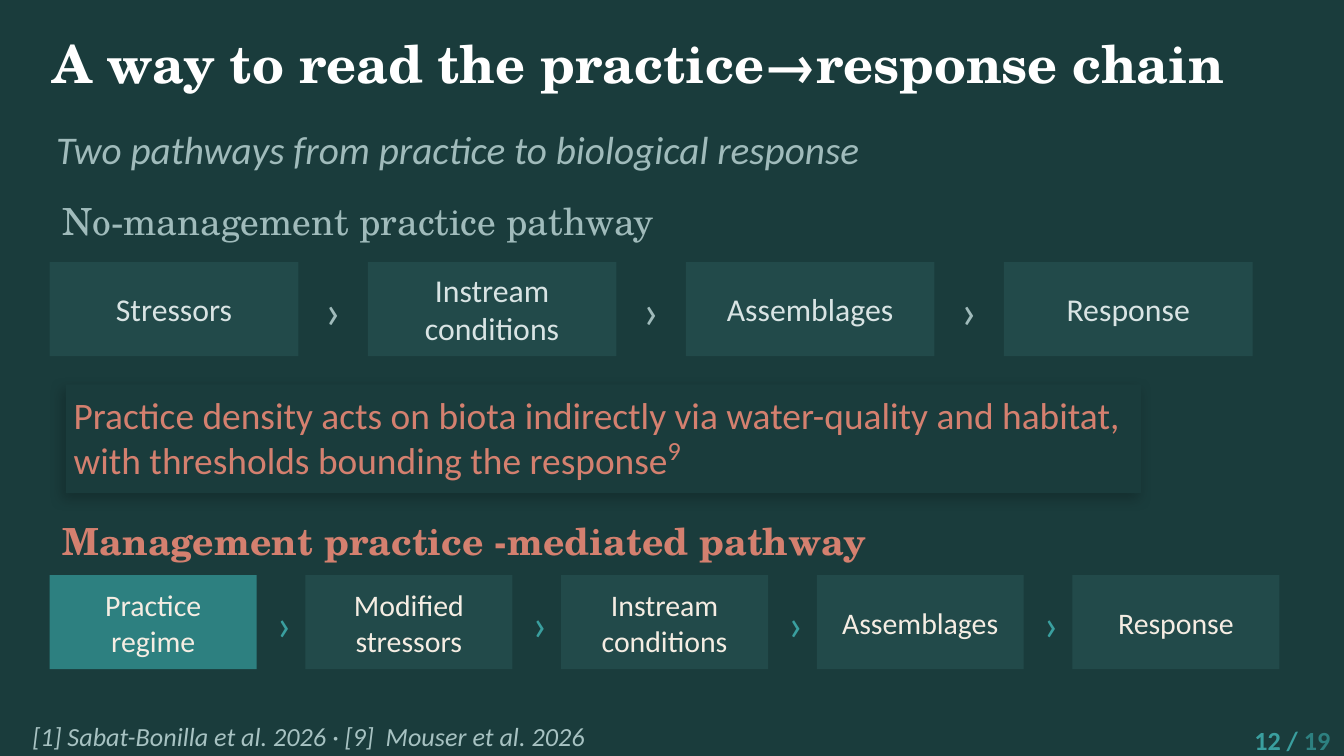
"""Build the slide on two pathways from practice to biological response."""
from lxml import etree
from pptx import Presentation, util as u
from pptx.dml.color import RGBColor
from pptx.enum import shapes, text
from pptx.oxml.ns import qn

WIDTH = 10
HEIGHT = WIDTH * 9 / 16
SERIF, SANS = "TeX Gyre Schola", "Calibri"
BACKGROUND = RGBColor(0x1A, 0x3C, 0x3C)
PANEL = RGBColor(0x22, 0x4A, 0x4A)
TEAL = RGBColor(0x2D, 0x80, 0x80)
BRIGHT_TEAL = RGBColor(0x3A, 0x9F, 0x9F)
MIST = RGBColor(0xA0, 0xBB, 0xBB)
PALE = RGBColor(0xD9, 0xE4, 0xE4)
CITATION = RGBColor(0xA7, 0xC2, 0xC2)
CREAM = RGBColor(0xF5, 0xED, 0xE3)
CORAL = RGBColor(0xD4, 0x80, 0x6F)
WHITE = RGBColor(0xFF, 0xFF, 0xFF)

LEFT, STEP_HEIGHT, ARROW_MARGIN = 0.37, 0.7, 0.05
LEFT_ALIGN, CENTER, RIGHT = text.PP_ALIGN.LEFT, text.PP_ALIGN.CENTER, text.PP_ALIGN.RIGHT
MIDDLE, TOP = text.MSO_ANCHOR.MIDDLE, text.MSO_ANCHOR.TOP
INSETS, NO_INSETS = (0.1, 0.05), (0, 0)

HEADINGS = [
    ("A way to read the practice→response chain", (0.29, 0.06, 9.42, 0.81),
     dict(size=28, color=WHITE, font=SERIF, bold=True)),
    ("Two pathways from practice to biological response", (0.32, 0.84, 9, 0.53),
     dict(size=21, color=MIST, italic=True)),
    ("No-management practice pathway", (LEFT, 1.43, 4.68, 0.43),
     dict(size=20, color=MIST, font=SERIF)),
    ("Management practice -mediated pathway", (LEFT, 3.76, 7.25, 0.53),
     dict(size=20, color=CORAL, font=SERIF, bold=True)),
]
PATHWAYS = [
    dict(steps=["Stressors", "Instream\nconditions", "Assemblages", "Response"],
         top=1.95, span=8.95, step_width=1.85, size=17, color=PALE,
         first_fill=PANEL, arrow_size=26, arrow_color=MIST),
    dict(steps=["Practice\nregime", "Modified\nstressors", "Instream\nconditions",
                "Assemblages", "Response"],
         top=4.28, span=9.15, step_width=1.54, size=16, color=CREAM,
         first_fill=TEAL, arrow_size=24, arrow_color=BRIGHT_TEAL),
]
FINDING = [
    ("Practice density acts on biota indirectly via water-quality and habitat, "
     "with thresholds bounding the response", (0.45, 2.87, 8, 0.77),
     dict(size=20, color=CORAL, anchor=TOP)),
    ("9", (4.87, 3.13, 0.53, 0.44),
     dict(size=14, color=CORAL, anchor=TOP, insets=(0.1, 0.1))),
]
SOURCES = "[1] Sabat-Bonilla et al. 2026 · [9]  Mouser et al. 2026"
PAGE, PAGE_COUNT = "12 / ", "19"


def write(part, words, size, color, font=SANS, bold=False, italic=False,
          align=LEFT_ALIGN, anchor=MIDDLE, insets=INSETS):
    frame = part.text_frame
    frame.word_wrap = True
    frame.vertical_anchor = anchor
    frame.margin_left = frame.margin_right = u.Inches(insets[0])
    frame.margin_top = frame.margin_bottom = u.Inches(insets[1])
    frame.text = words
    for paragraph in frame.paragraphs:
        paragraph.alignment = align
        style = paragraph.font
        style.name, style.size = font, u.Pt(size)
        style.bold, style.italic = bold, italic
        style.color.rgb = color
    return frame.paragraphs[0]


def add_text(slide, words, place, style):
    return write(slide.shapes.add_textbox(*map(u.Inches, place)), words, **style)


def add_panel(slide, place, fill):
    panel = slide.shapes.add_shape(shapes.MSO_SHAPE.RECTANGLE, *map(u.Inches, place))
    panel.shadow.inherit = False
    panel.fill.solid()
    panel.fill.fore_color.rgb = fill
    panel.line.fill.background()
    return panel


def add_soft_shadow(panel):
    effects = panel.element.spPr.find(qn("a:effectLst"))
    shadow = etree.SubElement(
        effects, qn("a:outerShdw"), blurRad=str(u.Pt(7)), dist=str(u.Pt(3)),
        dir=str(135 * 60000), algn="bl", rotWithShape="0")
    black = etree.SubElement(shadow, qn("a:srgbClr"), val="000000")
    etree.SubElement(black, qn("a:alpha"), val="22000")


def add_pathway(slide, steps, top, span, step_width, size, color,
                first_fill, arrow_size, arrow_color):
    gap = (span - len(steps) * step_width) / (len(steps) - 1)
    for index, step in enumerate(steps):
        left = LEFT + index * (step_width + gap)
        if index:
            place = (left - gap + ARROW_MARGIN, top, gap - 2 * ARROW_MARGIN, STEP_HEIGHT)
            add_text(slide, "›", place,
                     dict(size=arrow_size, color=arrow_color, align=CENTER))
        box = add_panel(slide, (left, top, step_width, STEP_HEIGHT),
                        PANEL if index else first_fill)
        write(box, step, size, color, align=CENTER)


def main():
    deck = Presentation()
    deck.slide_width, deck.slide_height = u.Inches(WIDTH), u.Inches(HEIGHT)
    slide = deck.slides.add_slide(deck.slide_layouts[6])
    slide.background.fill.solid()
    slide.background.fill.fore_color.rgb = BACKGROUND

    for heading in HEADINGS:
        add_text(slide, *heading)
    for pathway in PATHWAYS:
        add_pathway(slide, **pathway)

    add_soft_shadow(add_panel(slide, (0.49, 2.86, 8, 0.81), BACKGROUND))
    for statement in FINDING:
        add_text(slide, *statement)

    sources = add_text(slide, SOURCES, (0.24, 5.31, 8.58, 0.32),
                       dict(size=14, color=CITATION, italic=True, insets=NO_INSETS))
    sources.line_spacing = 1.05
    page = add_text(slide, PAGE, (9.07, 5.39, 0.83, 0.24),
                    dict(size=14, color=BRIGHT_TEAL, bold=True, align=RIGHT,
                         insets=NO_INSETS))
    page_count = page.add_run()
    page_count.text = PAGE_COUNT
    page_count.font.color.rgb = TEAL
    deck.save("out.pptx")


if __name__ == "__main__":
    main()
